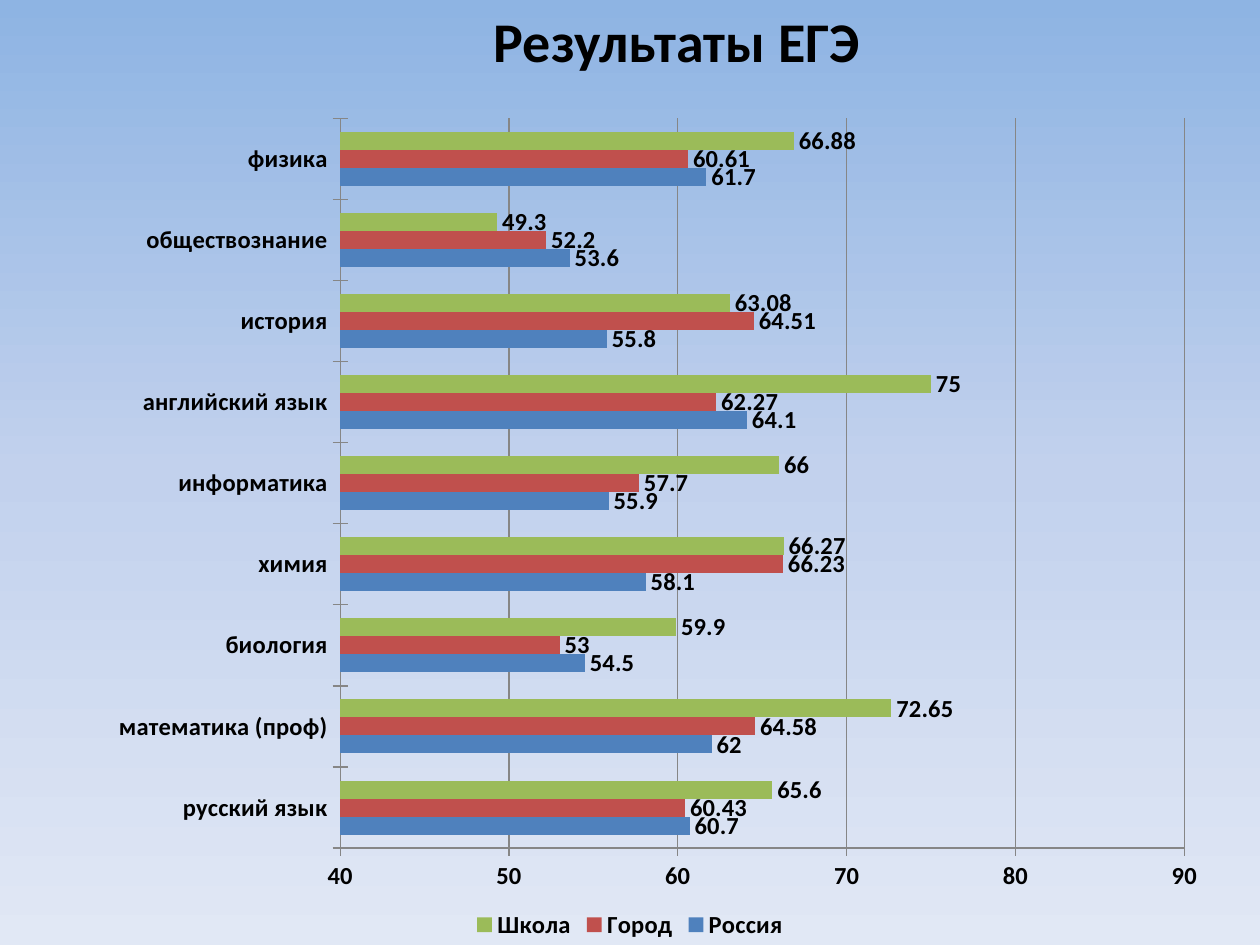
from dataclasses import dataclass

from lxml.etree import SubElement
from pptx import Presentation
from pptx.chart.data import CategoryChartData
from pptx.dml.color import RGBColor
from pptx.enum.chart import XL_CHART_TYPE, XL_LABEL_POSITION, XL_LEGEND_POSITION, XL_TICK_MARK
from pptx.enum.text import MSO_AUTO_SIZE
from pptx.oxml import parse_xml
from pptx.oxml.ns import nsdecls, qn
from pptx.util import Cm, Pt

TITLE = "Результаты ЕГЭ"
SUBJECTS = [
    "русский язык", "математика (проф)", "биология", "химия", "информатика",
    "английский язык", "история", "обществознание", "физика",
]
RESULTS = {
    "Россия": [60.7, 62, 54.5, 58.1, 55.9, 64.1, 55.8, 53.6, 61.7],
    "Город": [60.43, 64.58, 53, 66.23, 57.7, 62.27, 64.51, 52.2, 60.61],
    "Школа": [65.6, 72.65, 59.9, 66.27, 66, 75, 63.08, 49.3, 66.88],
}
PLOT_AREA = {"x": 0.27, "y": 0.06, "w": 0.67, "h": 0.83}


@dataclass(frozen=True)
class Theme:
    font: str = "Calibri"
    title_size: int = 32
    chart_size: int = 14
    text: str = "000000"
    axis: str = "868686"
    series: tuple = ("4F81BD", "C0504D", "9BBB59")
    background: tuple = ((0, "8EB4E3"), (50, "C2D1ED"), (100, "E1E8F5"))


THEME = Theme()


def style_font(font, size):
    font.name = THEME.font
    font.size = Pt(size)
    font.bold = True
    font.color.rgb = RGBColor.from_string(THEME.text)


def paint_background(slide):
    fill = slide.background.fill
    fill.gradient()
    fill.gradient_angle = 270
    stops = slide.element.find(".//" + qn("a:gsLst"))
    for stop in list(stops):
        stops.remove(stop)
    for percent, color in THEME.background:
        stop = SubElement(stops, qn("a:gs"), pos=str(percent * 1000))
        SubElement(stop, qn("a:srgbClr"), val=color)


def add_title(slide):
    shape = slide.shapes.add_textbox(Cm(9.7), Cm(0), Cm(7.98), Cm(1.63))
    text_frame = shape.text_frame
    text_frame.word_wrap = False
    text_frame.auto_size = MSO_AUTO_SIZE.SHAPE_TO_FIT_TEXT
    text_frame.text = TITLE
    style_font(text_frame.paragraphs[0].font, THEME.title_size)


def place_plot_area(chart):
    plot_area = chart.element.find(".//" + qn("c:plotArea"))
    for layout in plot_area.findall(qn("c:layout")):
        plot_area.remove(layout)
    sizes = "".join(f'<c:{key} val="{value}"/>' for key, value in PLOT_AREA.items())
    plot_area.insert(0, parse_xml(
        f'<c:layout {nsdecls("c")}><c:manualLayout><c:layoutTarget val="inner"/>'
        f'<c:xMode val="edge"/><c:yMode val="edge"/>{sizes}</c:manualLayout></c:layout>'
    ))


def style_axes(chart):
    value_axis = chart.value_axis
    value_axis.minimum_scale = 40
    value_axis.maximum_scale = 90
    value_axis.major_unit = 10
    value_axis.has_major_gridlines = True
    for axis in (chart.category_axis, value_axis):
        axis.major_tick_mark = XL_TICK_MARK.CROSS
        axis.minor_tick_mark = XL_TICK_MARK.NONE
        style_font(axis.tick_labels.font, THEME.chart_size)
    for line in (chart.category_axis.format.line, value_axis.format.line,
                 value_axis.major_gridlines.format.line):
        line.color.rgb = RGBColor.from_string(THEME.axis)
        line.width = Pt(0.75)


def add_results_chart(slide):
    data = CategoryChartData()
    data.categories = SUBJECTS
    for name, values in RESULTS.items():
        data.add_series(name, values)
    chart = slide.shapes.add_chart(
        XL_CHART_TYPE.BAR_CLUSTERED, Cm(0), Cm(1.32), Cm(25.4), Cm(17.73), data
    ).chart
    chart.has_title = False
    style_font(chart.font, THEME.chart_size)
    chart.has_legend = True
    chart.legend.position = XL_LEGEND_POSITION.BOTTOM
    chart.legend.include_in_layout = False
    style_font(chart.legend.font, THEME.chart_size)
    place_plot_area(chart)
    style_axes(chart)
    plot = chart.plots[0]
    plot.gap_width = 150
    plot.vary_by_categories = False
    for series, color in zip(plot.series, THEME.series):
        series.format.fill.solid()
        series.format.fill.fore_color.rgb = RGBColor.from_string(color)
        labels = series.data_labels
        labels.show_value = True
        labels.position = XL_LABEL_POSITION.OUTSIDE_END
        style_font(labels.font, THEME.chart_size)


def main():
    presentation = Presentation()
    presentation.slide_width = Cm(25.4)
    presentation.slide_height = Cm(19.05)
    slide = presentation.slides.add_slide(presentation.slide_layouts[6])
    paint_background(slide)
    add_title(slide)
    add_results_chart(slide)
    presentation.save("out.pptx")


if __name__ == "__main__":
    main()
